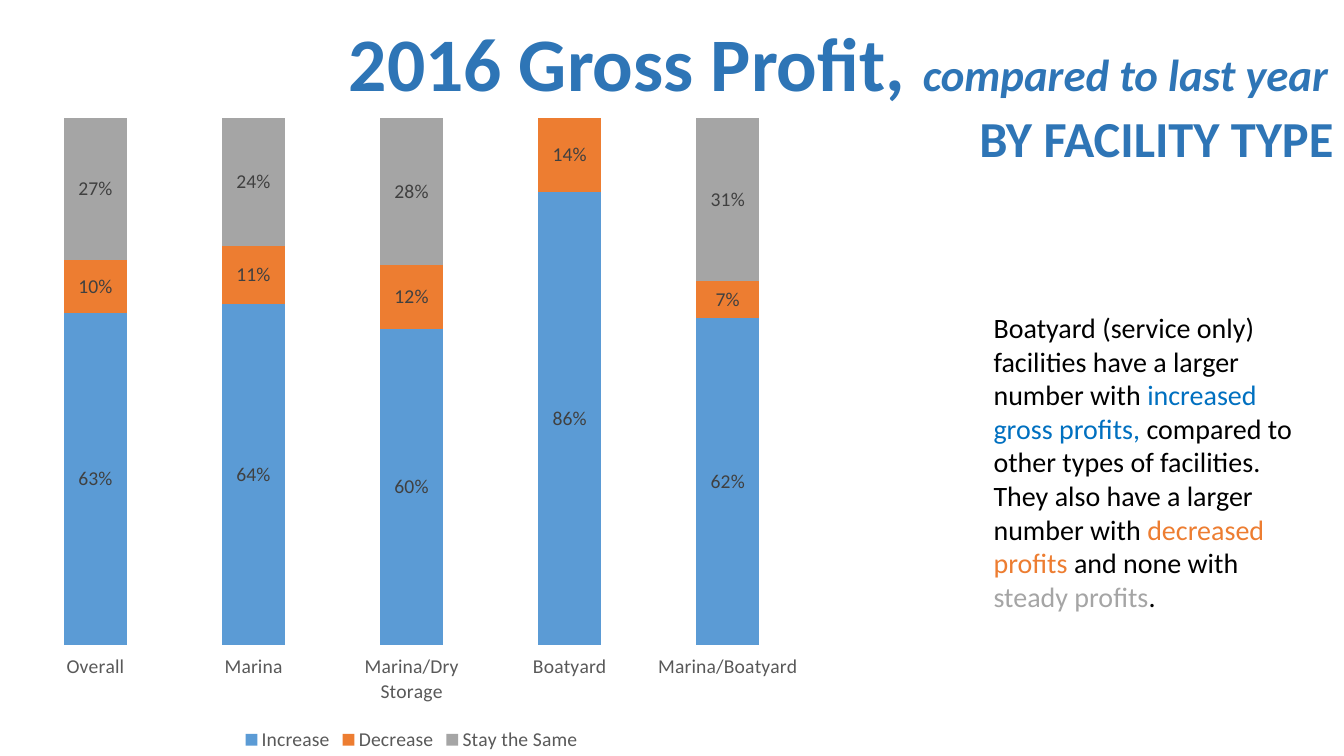
from pptx import Presentation
from pptx.chart.data import CategoryChartData
from pptx.dml.color import RGBColor
from pptx.enum.chart import XL_CHART_TYPE, XL_LEGEND_POSITION, XL_TICK_LABEL_POSITION, XL_TICK_MARK
from pptx.enum.text import PP_ALIGN
from pptx.util import Cm, Pt

STACKED_100 = XL_CHART_TYPE.COLUMN_STACKED_100
LEGEND_BOTTOM = XL_LEGEND_POSITION.BOTTOM
LABELS_LOW = XL_TICK_LABEL_POSITION.LOW
NO_TICKS = XL_TICK_MARK.NONE
LEFT, CENTER, RIGHT = PP_ALIGN.LEFT, PP_ALIGN.CENTER, PP_ALIGN.RIGHT

THEME = {
    "font": "Calibri",
    "colors": {
        "title": "2E75B6", "text": "000000", "highlight": "0070C0",
        "axis": "595959", "label": "404040",
        "increase": "5B9BD5", "decrease": "ED7D31", "same": "A5A5A5",
    },
    "sizes": {"title": 54, "comparison": 32, "subtitle": 36, "body": 20, "chart": 14},
}

# Each paragraph: alignment, then runs of (text, size, color, italic)
TITLE = [
    (CENTER, [("2016 Gross Profit, ", "title", "title", False),
              ("compared to last year", "comparison", "title", True)]),
    (RIGHT, [("BY FACILITY TYPE", "subtitle", "title", False)]),
]
COMMENTARY = [
    (LEFT, [
        ("Boatyard (service only) facilities have a larger number with ", "body", "text", False),
        ("increased gross profits,", "body", "highlight", False),
        (" compared to other types of facilities. They also have a larger number with ",
         "body", "text", False),
        ("decreased profits ", "body", "decrease", False),
        ("and none with ", "body", "text", False),
        ("steady profits", "body", "same", False),
        (".", "body", "text", False),
    ]),
]
FACILITIES = ["Overall", "Marina", "Marina/Dry Storage", "Boatyard", "Marina/Boatyard"]
SERIES = [
    ("Increase", "increase", [0.63, 0.64, 0.6, 0.86, 0.62]),
    ("Decrease", "decrease", [0.1, 0.11, 0.12, 0.14, 0.07]),
    ("Stay the Same", "same", [0.27, 0.24, 0.28, None, 0.31]),
]

TITLE_BOX = (Cm(8.41), Cm(0.28), Cm(25.45), Cm(4.11))
COMMENTARY_BOX = (Cm(24.79), Cm(7.7), Cm(8.15), Cm(7.95))
CHART_BOX = (Cm(0), Cm(2.64), Cm(20.75), Cm(16.41))


def color(name):
    return RGBColor.from_string(THEME["colors"][name])


def style_font(font, size, color_name):
    font.name = THEME["font"]
    font.size = Pt(THEME["sizes"][size])
    font.color.rgb = color(color_name)


def add_text(slide, box, paragraphs, wrap, bold):
    frame = slide.shapes.add_textbox(*box).text_frame
    frame.word_wrap = wrap
    for index, (alignment, runs) in enumerate(paragraphs):
        paragraph = frame.add_paragraph() if index else frame.paragraphs[0]
        paragraph.alignment = alignment
        paragraph.font.name = THEME["font"]
        paragraph.font.bold = bold
        for text, size, color_name, italic in runs:
            run = paragraph.add_run()
            run.text = text
            style_font(run.font, size, color_name)
            run.font.italic = italic


def add_profit_chart(slide):
    data = CategoryChartData(number_format="0%")
    data.categories = FACILITIES
    for name, _, values in SERIES:
        data.add_series(name, values)
    chart = slide.shapes.add_chart(STACKED_100, *CHART_BOX, data).chart
    style_font(chart.font, "chart", "axis")
    chart.has_title = False
    chart.has_legend = True
    chart.legend.position = LEGEND_BOTTOM
    chart.legend.include_in_layout = False
    style_font(chart.legend.font, "chart", "axis")

    category_axis = chart.category_axis
    category_axis.major_tick_mark = NO_TICKS
    category_axis.tick_label_position = LABELS_LOW
    category_axis.format.line.fill.background()
    style_font(category_axis.tick_labels.font, "chart", "axis")
    value_axis = chart.value_axis
    value_axis.visible = False
    value_axis.has_major_gridlines = False
    value_axis.minimum_scale, value_axis.maximum_scale = 0, 1

    plot = chart.plots[0]
    plot.vary_by_categories = False
    plot.gap_width, plot.overlap = 150, 100
    for series, (_, color_name, _) in zip(plot.series, SERIES):
        series.format.fill.solid()
        series.format.fill.fore_color.rgb = color(color_name)
        labels = series.data_labels
        labels.show_value = True
        labels.number_format = "0%"
        labels.number_format_is_linked = False
        style_font(labels.font, "chart", "label")


def main():
    presentation = Presentation()
    presentation.slide_width, presentation.slide_height = Cm(33.87), Cm(19.05)
    slide = presentation.slides.add_slide(presentation.slide_layouts[6])
    add_text(slide, TITLE_BOX, TITLE, wrap=False, bold=True)
    add_text(slide, COMMENTARY_BOX, COMMENTARY, wrap=True, bold=False)
    add_profit_chart(slide)
    presentation.save("out.pptx")


if __name__ == "__main__":
    main()
